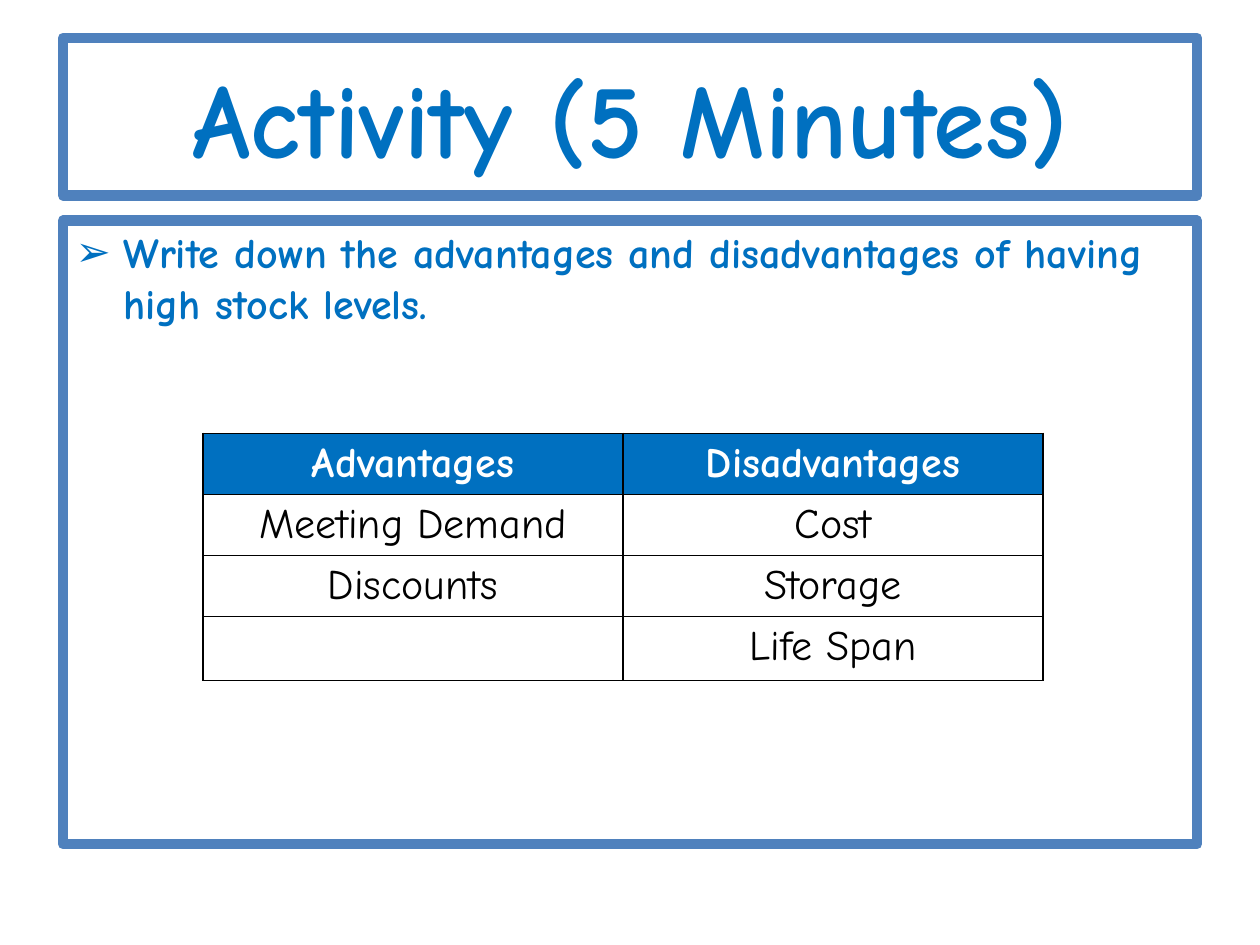
from lxml import etree
from pptx import Presentation, util as u
from pptx.dml.color import RGBColor
from pptx.enum import text
from pptx.oxml import ns

WHITE = RGBColor(255, 255, 255)
BLACK = RGBColor(0, 0, 0)
BLUE = RGBColor(0x00, 0x70, 0xC0)
FRAME = RGBColor(0x4F, 0x81, 0xBD)
ROWS = [
    ("Advantages", "Disadvantages"),
    ("Meeting Demand", "Cost"),
    ("Discounts", "Storage"),
    ("", "Life Span"),
]


def write(para, words, size=24, color=BLUE, bold=True, align=text.PP_ALIGN.CENTER):
    para.alignment = align
    para.space_before = u.Pt(0)
    para.font.size = u.Pt(size)
    if words:
        span = para.add_run()
        span.text = words
        span.font.name = "Comic Neue"
        span.font.size = u.Pt(size)
        span.font.bold = bold
        span.font.color.rgb = color


class SlideBuilder:
    def __init__(self, page):
        self.page = page

    def frame(self, box, top, height, anchor):
        box.left, box.top = u.Inches(0.5), u.Inches(top)
        box.width, box.height = u.Inches(9), u.Inches(height)
        box.fill.solid()
        box.fill.fore_color.rgb = WHITE
        box.line.color.rgb = FRAME
        box.line.width = u.Pt(6)
        box.text_frame.word_wrap = True
        box.text_frame.auto_size = text.MSO_AUTO_SIZE.NONE
        box.text_frame.vertical_anchor = anchor
        return box.text_frame.paragraphs[0]

    def title(self, words):
        para = self.frame(self.page.shapes.title, 0.3, 1.25, text.MSO_ANCHOR.MIDDLE)
        write(para, words, size=60)

    def bullet(self, words):
        para = self.frame(self.page.placeholders[1], 1.75, 4.95, text.MSO_ANCHOR.TOP)
        props = para._p.get_or_add_pPr()
        props.set("marL", str(u.Inches(0.38)))
        props.set("indent", str(-u.Inches(0.38)))
        etree.SubElement(props, ns.qn("a:buChar"), char="➢")
        write(para, words, align=text.PP_ALIGN.LEFT)

    def borders(self, cell):
        props = cell._tc.get_or_add_tcPr()
        for side in ("lnL", "lnR", "lnT", "lnB"):
            line = etree.SubElement(props, ns.qn("a:" + side), w=str(u.Pt(1)))
            fill = etree.SubElement(line, ns.qn("a:solidFill"))
            etree.SubElement(fill, ns.qn("a:srgbClr"), val=str(BLACK))

    def table(self, rows):
        row_height = 0.48
        grid = self.page.shapes.add_table(
            len(rows), len(rows[0]), u.Inches(1.61), u.Inches(3.44),
            u.Inches(6.67), u.Inches(row_height * len(rows))).table
        for r, row in enumerate(rows):
            header = r == 0
            for c, words in enumerate(row):
                cell = grid.cell(r, c)
                self.borders(cell)
                cell.fill.solid()
                cell.fill.fore_color.rgb = BLUE if header else WHITE
                write(cell.text_frame.paragraphs[0], words,
                      color=WHITE if header else BLACK, bold=header)


def main():
    deck = Presentation()
    deck.slide_width, deck.slide_height = u.Inches(10), u.Inches(7.5)
    builder = SlideBuilder(deck.slides.add_slide(deck.slide_layouts[1]))
    builder.title("Activity (5 Minutes)")
    builder.bullet("Write down the advantages and disadvantages of having high stock levels.")
    builder.table(ROWS)
    deck.save("out.pptx")


if __name__ == "__main__":
    main()
